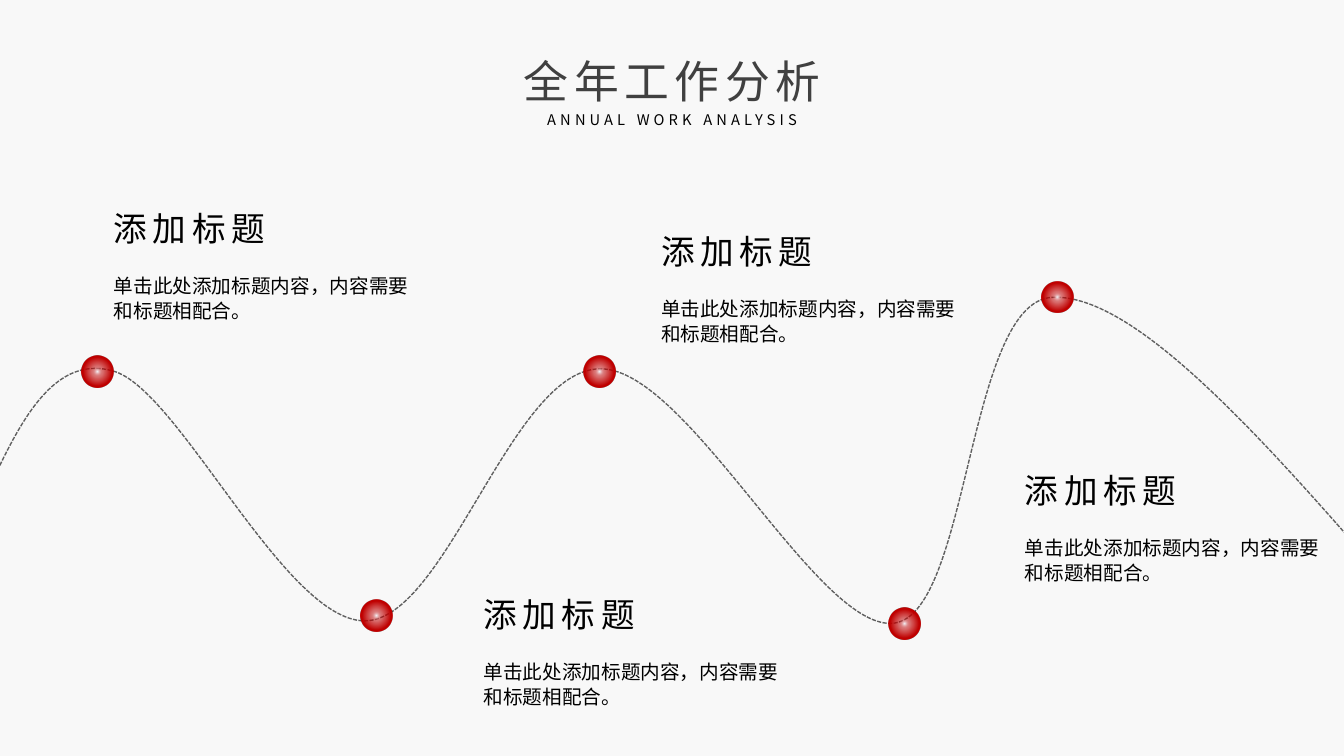
from lxml import etree
from pptx import Presentation
from pptx.dml import color
from pptx.enum import dml, shapes, text
from pptx.oxml import ns
from pptx.util import Pt

# Content
TITLE = "全年工作分析"
SUBTITLE = "ANNUAL WORK ANALYSIS"
HEADING = "添加标题"
BODY = "单击此处添加标题内容，内容需要和标题相配合。"

# Places in points
TITLE_BOX = (352.8, 34.6, 254.9, 46.1)
SUBTITLE_BOX = (375.1, 75.6, 210.2, 20.2)
HEADING_SIZE = (126.7, 36)
BODY_SIZE = (235.4, 43.9)
BODY_DROP = 46.1
NOTES = [(74.2, 144.7), (338.4, 420.5), (465.1, 161.3), (725, 331.9)]
DOT_SIZE = 22.6
DOTS = [(58.3, 254.2), (257.8, 428.4), (416.9, 254.2), (635, 434.2), (743.8, 200.9)]
WAVE_START = (-16.6, 368.6)
WAVE = [  # two control points, then the end of each arc
    ((9.4, 310.3), (34.6, 252), (80.6, 265)),
    ((127.4, 277.2), (203, 443.5), (260.6, 443.5)),
    ((319, 442.8), (365.8, 262.8), (429.1, 263.5)),
    ((491.8, 263.5), (585.4, 453.6), (639.4, 445)),
    ((692.6, 436.3), (691.2, 215.3), (751.7, 212.4)),
    ((812.2, 209.5), (907.2, 319), (1002.2, 428.4)),
]

THEME = {
    "font": "Noto Sans CJK SC",
    "background": "F8F8F8",
    "line": "606060",
    "dot": [(0, "F6F8FC", 100), (23, "C00000", 55), (63, "C00000", 100), (100, "C00000", 100)],
    "title": {"size": 32, "color": "404040", "spacing": 4},
    "subtitle": {"size": 10.5, "color": "000000", "spacing": 3},
    "heading": {"size": 24, "color": "000000", "spacing": 4},
    "body": {"size": 14, "color": "000000", "spacing": 0},
}


def rgb(value):
    return color.RGBColor.from_string(value)


def child(parent, tag, **attributes):
    element = etree.SubElement(parent, ns.qn(tag))
    for name, value in attributes.items():
        element.set(name, str(value))
    return element


def write(box, words, style, align=text.PP_ALIGN.LEFT, wrap=True, leading=None):
    frame = box.text_frame
    settings = {"word_wrap": wrap, "auto_size": text.MSO_AUTO_SIZE.SHAPE_TO_FIT_TEXT,
                "vertical_anchor": text.MSO_ANCHOR.TOP}
    for name, value in settings.items():
        setattr(frame, name, value)
    para = frame.paragraphs[0]
    para.alignment = align
    if leading:
        para.line_spacing = Pt(leading)
    span = para.add_run()
    span.text = words
    look = THEME[style]
    for name, value in {"name": THEME["font"], "size": Pt(look["size"])}.items():
        setattr(span.font, name, value)
    span.font.color.rgb = rgb(look["color"])
    properties = span._r.get_or_add_rPr()
    properties.set("spc", str(look["spacing"] * 100))
    child(properties, "a:ea", typeface=THEME["font"])


def add_text(page, place, *args, **options):
    write(page.shapes.add_textbox(*map(Pt, place)), *args, **options)


def add_wave(page):
    builder = page.shapes.build_freeform(Pt(WAVE_START[0]), Pt(WAVE_START[1]))
    builder.add_line_segments([tuple(map(Pt, arc[-1])) for arc in WAVE], close=False)
    wave = builder.convert_to_shape()
    wave.shadow.inherit = False
    wave.fill.background()
    wave.line.color.rgb = rgb(THEME["line"])
    wave.line.width = Pt(1)
    wave.line.dash_style = dml.MSO_LINE.SQUARE_DOT
    # Straight steps become curved arcs
    steps = list(wave._element.iter(ns.qn("a:lnTo")))
    for step, arc in zip(steps, WAVE):
        step.tag = ns.qn("a:cubicBezTo")
        step.remove(step[0])
        for x, y in arc:
            child(step, "a:pt", x=Pt(x) - wave.left, y=Pt(y) - wave.top)


def add_dot(page, left, top):
    dot = page.shapes.add_shape(shapes.MSO_SHAPE.OVAL, *map(Pt, (left, top, DOT_SIZE, DOT_SIZE)))
    dot.shadow.inherit = False
    dot.line.fill.background()
    dot.fill.gradient()
    gradient = dot._element.spPr.find(ns.qn("a:gradFill"))
    for part in list(gradient):
        gradient.remove(part)
    stops = child(gradient, "a:gsLst")
    for position, shade, opacity in THEME["dot"]:
        stop = child(stops, "a:gs", pos=position * 1000)
        fill = child(stop, "a:srgbClr", val=shade)
        if opacity < 100:
            child(fill, "a:alpha", val=opacity * 1000)
    centre = child(gradient, "a:path", path="circle")
    child(centre, "a:fillToRect", **dict.fromkeys("ltrb", 50000))


def main():
    deck = Presentation()
    deck.slide_width, deck.slide_height = Pt(960), Pt(540)
    page = deck.slides.add_slide(deck.slide_layouts[5])
    page.background.fill.solid()
    page.background.fill.fore_color.rgb = rgb(THEME["background"])

    # Title and subtitle
    title = page.shapes.title
    for name, value in zip(("left", "top", "width", "height"), TITLE_BOX):
        setattr(title, name, Pt(value))
    write(title, TITLE, "title", text.PP_ALIGN.CENTER)
    add_text(page, SUBTITLE_BOX, SUBTITLE, "subtitle", text.PP_ALIGN.CENTER, wrap=False)

    # Wave with its milestones
    add_wave(page)
    for left, top in DOTS:
        add_dot(page, left, top)

    # Notes beside the wave
    for left, top in NOTES:
        add_text(page, (left, top, *HEADING_SIZE), HEADING, "heading")
        add_text(page, (left, top + BODY_DROP, *BODY_SIZE), BODY, "body", leading=18)

    deck.save("out.pptx")


if __name__ == "__main__":
    main()
